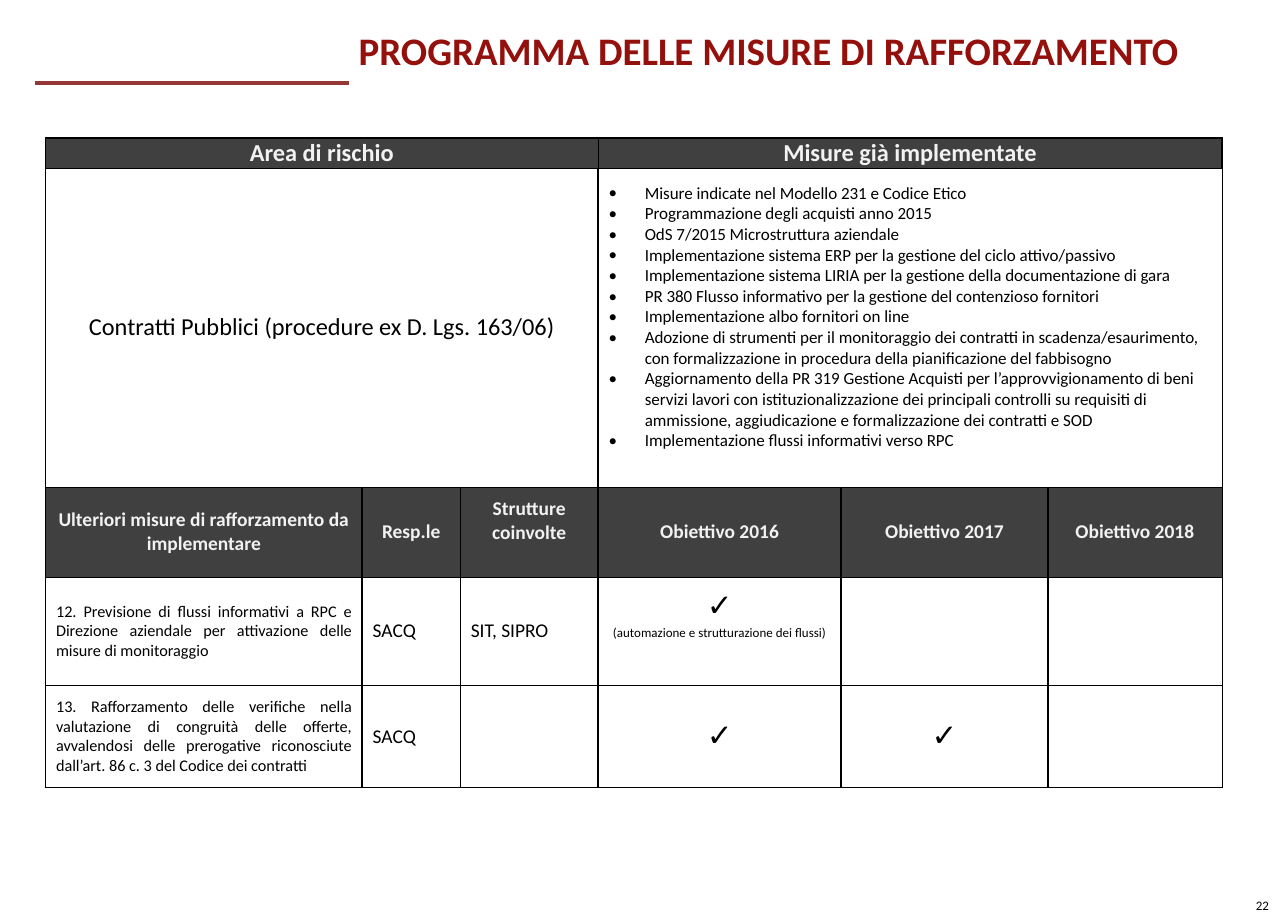
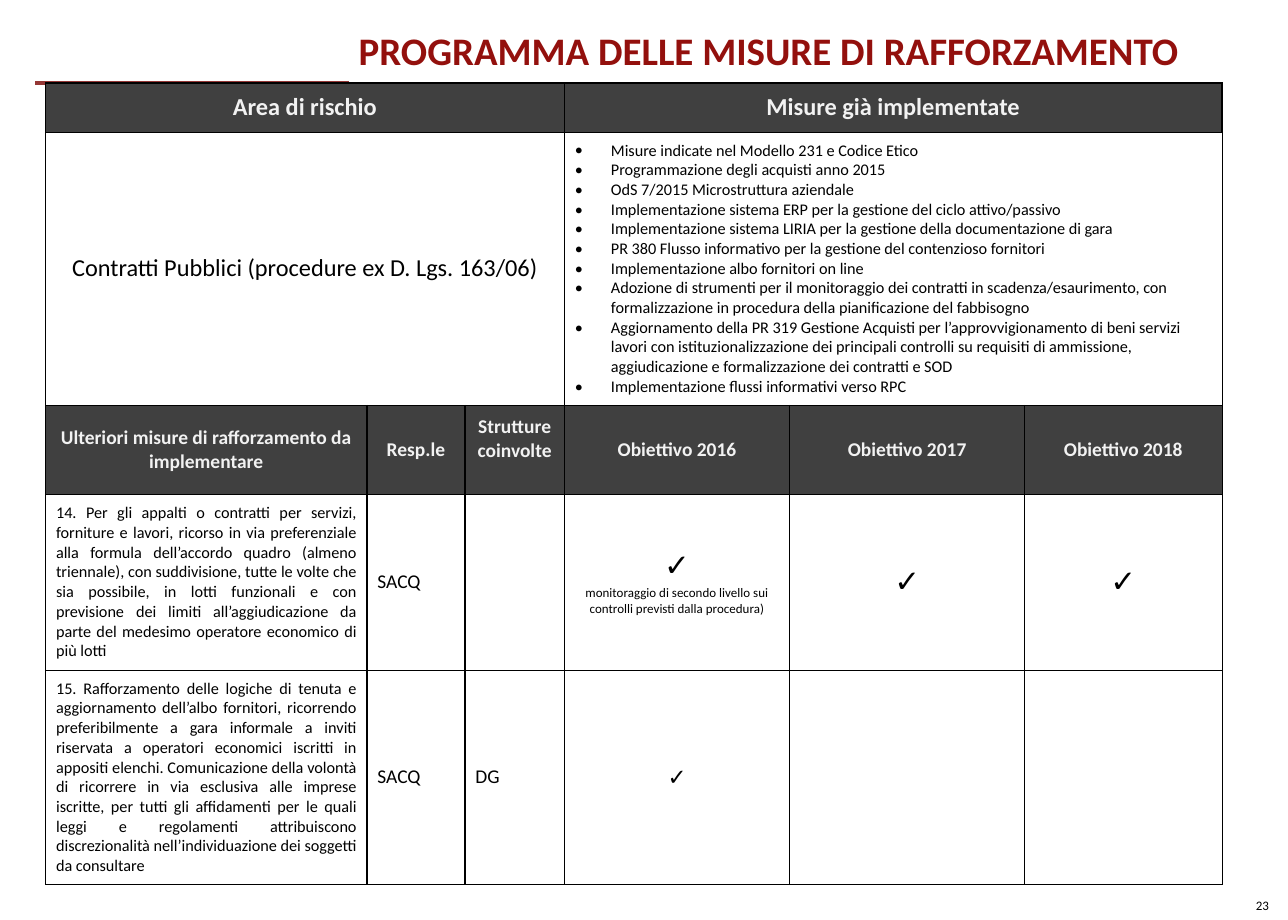
from lxml import etree
from pptx import Presentation
from pptx.dml.color import RGBColor as RGB
from pptx.enum.shapes import MSO_CONNECTOR as LINK
from pptx.enum.text import MSO_ANCHOR as ANCHOR, PP_ALIGN as ALIGN
from pptx.oxml import parse_xml
from pptx.oxml.ns import nsdecls, qn
from pptx.util import Inches, Pt

FONT = "Calibri"
HUES = {
    "title": "93100D",
    "rule": "953735",
    "head": "404040",
    "pale": "F2F2F2",
    "ink": "000000",
    "white": "FFFFFF",
}
TITLE = "PROGRAMMA DELLE MISURE DI RAFFORZAMENTO"
AREA = "Contratti Pubblici (procedure ex D. Lgs. 163/06)"
DONE = [
    "Misure indicate nel Modello 231 e Codice Etico",
    "Programmazione degli acquisti anno 2015",
    "OdS 7/2015 Microstruttura aziendale",
    "Implementazione sistema ERP per la gestione del ciclo attivo/passivo",
    "Implementazione sistema LIRIA per la gestione della documentazione di gara",
    "PR 380 Flusso informativo per la gestione del contenzioso fornitori",
    "Implementazione albo fornitori on line",
    "Adozione di strumenti per il monitoraggio dei contratti in scadenza/esaurimento, "
    "con formalizzazione in procedura della pianificazione del fabbisogno",
    "Aggiornamento della PR 319 Gestione Acquisti per l’approvvigionamento di beni "
    "servizi lavori con istituzionalizzazione dei principali controlli su requisiti di "
    "ammissione, aggiudicazione e formalizzazione dei contratti e SOD",
    "Implementazione flussi informativi verso RPC",
]
HEADS = [
    "Ulteriori misure di rafforzamento da implementare", "Resp.le",
    "Strutture coinvolte", "Obiettivo 2016", "Obiettivo 2017", "Obiettivo 2018",
]
TICK = [("✓", 19)]

# Each action: measure, owner, units, (text, size) lines of each yearly goal, lift.
PAGES = [
    {
        "number": 22, "top": 1.18, "bullet": 10.5, "lift": 0.18,
        "cols": [2.71, 0.84, 1.18, 2.08, 1.77, 1.49],
        "rows": [0.26, 2.73, 0.77, 0.93, 0.87],
        "acts": [
            ("12. Previsione di flussi informativi a RPC e Direzione aziendale per "
             "attivazione delle misure di monitoraggio",
             "SACQ", "SIT, SIPRO",
             [TICK + [("(automazione e strutturazione dei flussi)", 8)], [], []], 0.3),
            ("13. Rafforzamento delle verifiche nella valutazione di congruità delle "
             "offerte, avvalendosi delle prerogative riconosciute dall’art. 86 c. 3 "
             "del Codice dei contratti",
             "SACQ", "", [TICK, TICK, []], 0),
        ],
    },
    {
        "number": 23, "top": 0.71, "bullet": 10, "lift": 0,
        "cols": [2.75, 0.84, 0.85, 1.93, 2.01, 1.69],
        "rows": [0.42, 2.34, 0.76, 1.51, 1.83],
        "acts": [
            ("14. Per gli appalti o contratti per servizi, forniture e lavori, ricorso "
             "in via preferenziale alla formula dell’accordo quadro (almeno triennale), "
             "con suddivisione, tutte le volte che sia possibile, in lotti funzionali e "
             "con previsione dei limiti all’aggiudicazione da parte del medesimo "
             "operatore economico di più lotti",
             "SACQ", "",
             [TICK + [("monitoraggio di secondo livello sui controlli previsti dalla "
                       "procedura)", 8)], TICK, TICK], 0),
            ("15. Rafforzamento delle logiche di tenuta e aggiornamento dell’albo "
             "fornitori, ricorrendo preferibilmente a gara informale a inviti riservata "
             "a operatori economici iscritti in appositi elenchi. Comunicazione della "
             "volontà di ricorrere in via esclusiva alle imprese iscritte, per tutti gli "
             "affidamenti per le quali leggi e regolamenti attribuiscono discrezionalità "
             "nell’individuazione dei soggetti da consultare",
             "SACQ", "DG", [[("✓", 14)], [], []], 0),
        ],
    },
]


def color(name):
    return RGB.from_string(HUES[name])


def write(para, text, size, hue="ink", bold=False):
    para.text = text
    for run in para.runs:
        font = run.font
        font.name, font.size, font.bold = FONT, Pt(size), bold
        font.color.rgb = color(hue)


def add_text(slide, box, text, size, hue="ink", bold=False, pad=None, wrap=True):
    frame = slide.shapes.add_textbox(*map(Inches, box)).text_frame
    frame.word_wrap = wrap
    if pad is not None:
        frame.margin_left = frame.margin_right = Inches(pad)
        frame.margin_top = frame.margin_bottom = Inches(pad)
    write(frame.paragraphs[0], text, size, hue, bold)
    return frame.paragraphs[0]


def add_frame(slide, number):
    """Add the rule, title and page number that all slides share."""
    ends = map(Inches, (0.3, 0.71, 2.99, 0.71))
    rule = slide.shapes.add_connector(LINK.STRAIGHT, *ends)
    rule.line.color.rgb = color("rule")
    rule.line.width = Pt(2.25)
    etree.SubElement(rule._element.spPr, qn("a:effectLst"))
    add_text(slide, (10.65, 7.63, 0.35, 0.24), str(number), 8, wrap=False)
    title = add_text(slide, (3.07, 0.21, 7.75, 0.59), TITLE, 24, "title", True, pad=0)
    title.line_spacing = Pt(30)


def add_bullet(para):
    props = para._p.get_or_add_pPr()
    props.set("marL", str(Inches(0.31)))
    props.set("indent", str(-Inches(0.31)))
    etree.SubElement(props, qn("a:buFont")).set("typeface", FONT)
    etree.SubElement(props, qn("a:buChar")).set("char", "•")


def edge(cell, widths):
    """Draw cell borders; widths maps L, R, T, B to points."""
    props = cell._tc.get_or_add_tcPr()
    for spot, (side, width) in enumerate(widths.items()):
        props.insert(spot, parse_xml(
            f'<a:ln{side} {nsdecls("a")} w="{Pt(width)}"><a:solidFill>'
            f'<a:srgbClr val="{HUES["ink"]}"/></a:solidFill></a:ln{side}>'))


def put(table, row, col, lines, align=ALIGN.CENTER, hue="ink", bold=False,
        back="white", span=1, pads=(0.09, 0.07), lift=0, bullet=False):
    """Fill one cell with (text, size) lines; lift adds room under the text."""
    cell = table.cell(row, col)
    last = table.cell(row, col + span - 1)
    if span > 1:
        cell.merge(last)
    cell.fill.solid()
    cell.fill.fore_color.rgb = color(back)
    cell.vertical_anchor = ANCHOR.MIDDLE
    cell.margin_left = cell.margin_right = Inches(pads[0])
    cell.margin_top = Inches(pads[1])
    cell.margin_bottom = Inches(pads[1] + lift)
    frame = cell.text_frame
    for spot, (text, size) in enumerate(lines):
        para = frame.add_paragraph() if spot else frame.paragraphs[0]
        if bullet:
            add_bullet(para)
        para.alignment = align
        write(para, text, size, hue, bold)
    end = col + span == len(table.columns)
    top = row == 0
    widths = {
        "L": 0.5 if top or col == 0 else 1,
        "R": 1 if top == end else 0.5,
        "T": 1 if top else 0.5,
        "B": 0.5,
    }
    edge(cell, widths)
    if span > 1:
        edge(last, {side: widths[side] for side in "RTB"})


def add_plan(slide, page):
    cols, rows = page["cols"], page["rows"]
    box = map(Inches, (0.39, page["top"], sum(cols), sum(rows)))
    table = slide.shapes.add_table(len(rows), len(cols), *box).table
    table.first_row = table.horz_banding = False
    for col, width in zip(table.columns, cols):
        col.width = Inches(width)
    for row, height in zip(table.rows, rows):
        row.height = Inches(height)

    head = {"hue": "pale", "bold": True, "back": "head"}
    for col, text in ((0, "Area di rischio"), (3, "Misure già implementate")):
        put(table, 0, col, [(text, 15)], span=3, pads=(0.01, 0), **head)
    put(table, 1, 0, [(AREA, 15)], span=3)
    put(table, 1, 3, [(text, page["bullet"]) for text in DONE], ALIGN.LEFT,
        span=3, lift=page["lift"], bullet=True)
    for col, text in enumerate(HEADS):
        put(table, 2, col, [(text, 12)], lift=0.19 if col == 2 else 0, **head)
    for row, (text, owner, units, goals, lift) in enumerate(page["acts"], 3):
        put(table, row, 0, [(text, 10)], ALIGN.JUSTIFY)
        for col, name in enumerate((owner, units), 1):
            put(table, row, col, [(name, 12)] if name else [], ALIGN.LEFT)
        for col, goal in enumerate(goals, 3):
            put(table, row, col, goal, lift=lift if len(goal) > 1 else 0)


def main():
    deck = Presentation()
    deck.slide_width, deck.slide_height = Pt(793.75), Pt(567)
    for page in PAGES:
        slide = deck.slides.add_slide(deck.slide_layouts[6])
        add_frame(slide, page["number"])
        add_plan(slide, page)
    deck.save("out.pptx")


if __name__ == "__main__":
    main()
